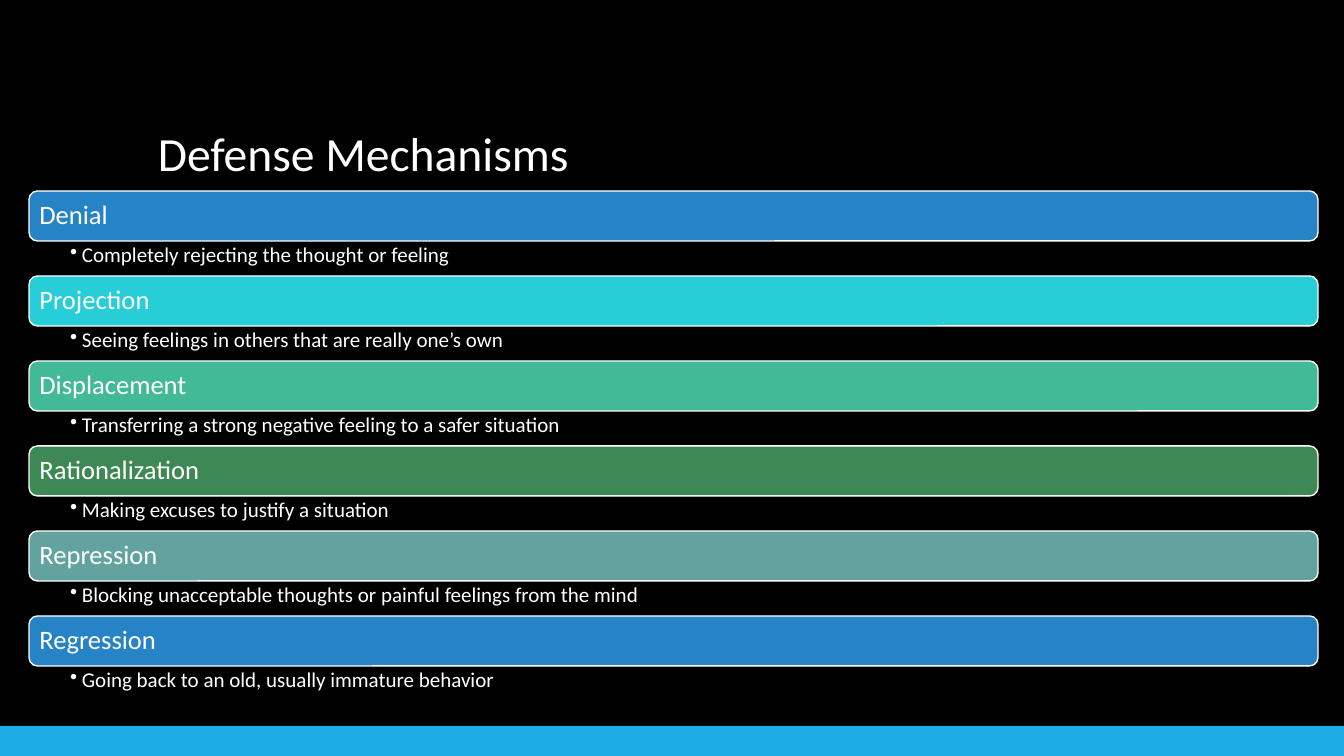
from dataclasses import dataclass

from lxml import etree
from pptx import Presentation
from pptx.dml.color import RGBColor
from pptx.enum.shapes import MSO_SHAPE
from pptx.enum.text import MSO_ANCHOR, MSO_AUTO_SIZE, PP_ALIGN
from pptx.oxml.ns import qn
from pptx.util import Emu, Pt

# Content: heading, definition, bar colour
TITLE = "Defense Mechanisms"
MECHANISMS = [
    ("Denial", "Completely rejecting the thought or feeling", "2683C6"),
    ("Projection", "Seeing feelings in others that are really one’s own", "27CED7"),
    ("Displacement", "Transferring a strong negative feeling to a safer situation", "42BA97"),
    ("Rationalization", "Making excuses to justify a situation", "3E8853"),
    ("Repression", "Blocking unacceptable thoughts or painful feelings from the mind", "62A39F"),
    ("Regression", "Going back to an old, usually immature behavior", "2683C6"),
]


@dataclass(frozen=True)
class Theme:
    font: str = "Calibri"
    background: str = "000000"
    text: str = "FFFFFF"
    footer: str = "1CADE4"
    title_size: int = 34
    heading_size: int = 19
    body_size: int = 15


THEME = Theme()

# Layout in px
SLIDE_W, SLIDE_H = 1344, 756
FOOTER_H = 30
TITLE_BOX = (148, 51, 1048, 136)
LIST_X, LIST_Y, LIST_W = 29, 191, 1289
BAR_H, BODY_H = 50, 35
BULLET_INDENT = 12


def px(n):
    return Emu(round(n * 914400 / 100.8))


def rgb(value):
    return RGBColor.from_string(value)


def write(sp, text, size, anchor, insets):
    """Fill a shape with one left-aligned run and return its paragraph."""
    tf = sp.text_frame
    tf.word_wrap = True
    tf.auto_size = MSO_AUTO_SIZE.NONE
    tf.vertical_anchor = anchor
    tf.margin_left, tf.margin_top, tf.margin_right, tf.margin_bottom = map(px, insets)
    p = tf.paragraphs[0]
    p.alignment = PP_ALIGN.LEFT
    p.line_spacing = 0.9
    r = p.add_run()
    r.text = text
    r.font.name = THEME.font
    r.font.size = Pt(size)
    r.font.color.rgb = rgb(THEME.text)
    return p


def add_bar(s, preset, box, color):
    sp = s.shapes.add_shape(preset, *map(px, box))
    sp.shadow.inherit = False
    sp.fill.solid()
    sp.fill.fore_color.rgb = rgb(color)
    return sp


def add_bullet(p):
    pPr = p._p.get_or_add_pPr()
    pPr.set("marL", str(px(BULLET_INDENT)))
    pPr.set("indent", str(-px(BULLET_INDENT)))
    etree.SubElement(pPr, qn("a:buChar")).set("char", "•")


def main():
    prs = Presentation()
    prs.slide_width, prs.slide_height = px(SLIDE_W), px(SLIDE_H)
    s = prs.slides.add_slide(prs.slide_layouts[5])
    s.background.fill.solid()
    s.background.fill.fore_color.rgb = rgb(THEME.background)

    # Footer band
    footer = add_bar(s, MSO_SHAPE.RECTANGLE,
                     (0, SLIDE_H - FOOTER_H, SLIDE_W, FOOTER_H), THEME.footer)
    footer.line.fill.background()

    # Title
    title = s.shapes.title
    title.left, title.top, title.width, title.height = map(px, TITLE_BOX)
    write(title, TITLE, THEME.title_size, MSO_ANCHOR.BOTTOM, (10, 5, 10, 5))

    # Heading bars, each with its definition below
    for i, (heading, definition, color) in enumerate(MECHANISMS):
        y = LIST_Y + i * (BAR_H + BODY_H)
        bar = add_bar(s, MSO_SHAPE.ROUNDED_RECTANGLE, (LIST_X, y, LIST_W, BAR_H), color)
        bar.line.color.rgb = rgb(THEME.text)
        bar.line.width = Pt(1)
        write(bar, heading, THEME.heading_size, MSO_ANCHOR.MIDDLE, (8, 8, 8, 8))

        body = s.shapes.add_textbox(*map(px, (LIST_X, y + BAR_H, LIST_W, BODY_H)))
        add_bullet(write(body, definition, THEME.body_size, MSO_ANCHOR.TOP, (41, 3, 15, 3)))

    prs.save("out.pptx")


if __name__ == "__main__":
    main()
